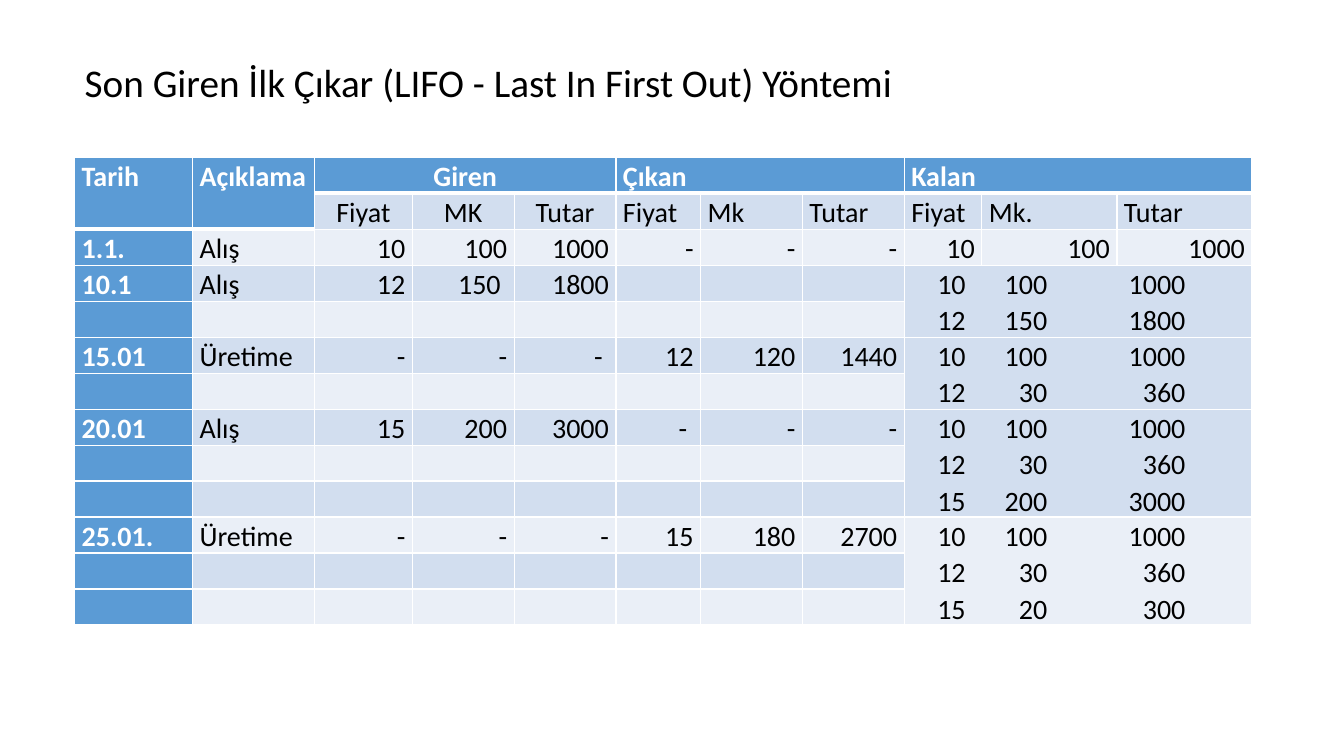
"""Build a slide with a LIFO stock valuation table."""
from lxml import etree
from pptx import Presentation
from pptx.dml.color import RGBColor
from pptx.enum import text as txt
from pptx.oxml import ns
from pptx.util import Inches, Pt

COLORS = {"header": "5B9BD5", "odd": "D2DEEF", "even": "EAEFF7",
          "white": "FFFFFF", "black": "000000"}
LEFT, CENTER, RIGHT = txt.PP_ALIGN.LEFT, txt.PP_ALIGN.CENTER, txt.PP_ALIGN.RIGHT


def write(frame, content, size=20, color="black", bold=False, align=LEFT, spacing=1.07, tabs=()):
    """Fill a text frame, one paragraph per line of content."""
    frame.text = content
    for paragraph in frame.paragraphs:
        paragraph.alignment = align
        paragraph.line_spacing = spacing
        for run in paragraph.runs:
            run.font.name = "Calibri"
            run.font.size = Pt(size)
            run.font.bold = bold
            run.font.color.rgb = RGBColor.from_string(COLORS[color])
        if tabs:
            stops = etree.SubElement(paragraph._p.get_or_add_pPr(), ns.qn("a:tabLst"))
            for stop in tabs:
                etree.SubElement(stops, ns.qn("a:tab"), pos=str(Inches(stop)), algn="r")


def draw_borders(cell, top, bottom):
    """Draw white borders around a cell, with widths in points."""
    properties = cell._tc.get_or_add_tcPr()
    for side, width in (("lnL", 1), ("lnR", 1), ("lnT", top), ("lnB", bottom)):
        line = etree.SubElement(properties, ns.qn(f"a:{side}"), w=str(Pt(width)))
        fill = etree.SubElement(line, ns.qn("a:solidFill"))
        etree.SubElement(fill, ns.qn("a:srgbClr"), val=COLORS["white"])


deck = Presentation()
deck.slide_width, deck.slide_height = Inches(13.33), Inches(7.5)
slide = deck.slides.add_slide(deck.slide_layouts[5])

title = slide.shapes.title
title.left, title.top, title.width, title.height = map(Inches, (0.74, 0.53, 11.9, 0.57))
write(title.text_frame, "Son Giren İlk Çıkar (LIFO - Last In First Out) Yöntemi", size=28, spacing=1.0)
title.text_frame.vertical_anchor = txt.MSO_ANCHOR.TOP
title.text_frame.auto_size = txt.MSO_AUTO_SIZE.SHAPE_TO_FIT_TEXT

ledger = [
    ["Tarih", "Açıklama", "Giren", "", "", "Çıkan", "", "", "Kalan"],
    ["", "", "Fiyat", "MK", "Tutar", "Fiyat", "Mk", "Tutar", "Fiyat", "Mk.", "Tutar"],
    ["1.1.", "Alış", "10", "100", "1000", "-", "-", "-", "10", "100", "1000"],
    ["10.1", "Alış", "12", "150 ", "1800"],
    [],
    ["15.01", "Üretime", "-", "-", "- ", "12", "120", "1440"],
    [],
    ["20.01", "Alış", "15", "200", "3000", "- ", "-", "-"],
    [],
    [],
    ["25.01.", "Üretime", "-", "-", "-", "15", "180", "2700"],
    [],
    [],
]
balances = {
    3: [(10, 100, 1000), (12, 150, 1800)],
    5: [(10, 100, 1000), (12, 30, 360)],
    7: [(10, 100, 1000), (12, 30, 360), (15, 200, 3000)],
    10: [(10, 100, 1000), (12, 30, 360), (15, 20, 300)],
}
column_widths = [1.17, 1.21, 0.97, 1.01, 1.01, 0.84, 1.01, 1.01, 0.77, 1.34, 1.34]

table = slide.shapes.add_table(len(ledger), len(column_widths), Inches(0.74), Inches(1.56),
                               Inches(11.66), Inches(4.64)).table
for column, width in zip(table.columns, column_widths):
    column.width = Inches(width)

for r, entries in enumerate(ledger):
    for c in range(len(column_widths)):
        cell = table.cell(r, c)
        heading = r == 0 or (r == 1 and c < 2)
        below_heading = r == (2 if c < 2 else 1)
        cell.margin_left = cell.margin_right = Inches(0.07)
        cell.margin_top = cell.margin_bottom = 0
        draw_borders(cell, 3 if below_heading else 1, 3 if heading and (r == 1 or c > 1) else 1)
        cell.fill.solid()
        band = "header" if heading or c == 0 else "odd" if r % 2 else "even"
        cell.fill.fore_color.rgb = RGBColor.from_string(COLORS[band])
        if c < len(entries) and entries[c]:
            if r < 2:
                align = CENTER if 2 <= c <= 4 else LEFT
            else:
                align = RIGHT if c >= 2 else LEFT
            emphasis = heading or c == 0
            write(cell.text_frame, entries[c], color="white" if emphasis else "black",
                  bold=emphasis, align=align)

for c in (0, 1):
    table.cell(0, c).merge(table.cell(1, c))
    draw_bottom = table.cell(0, c)._tc.tcPr.find(ns.qn("a:lnB"))
    draw_bottom.set("w", str(Pt(3)))
for c in (2, 5, 8):
    table.cell(0, c).merge(table.cell(0, c + 2))
for r, lots in balances.items():
    balance = table.cell(r, 8)
    balance.merge(table.cell(r + len(lots) - 1, 10))
    lines = ["".join(f"\t{value}" for value in lot) for lot in lots]
    write(balance.text_frame, "\n".join(lines), tabs=(0.54, 1.35, 2.72))

deck.save("out.pptx")
